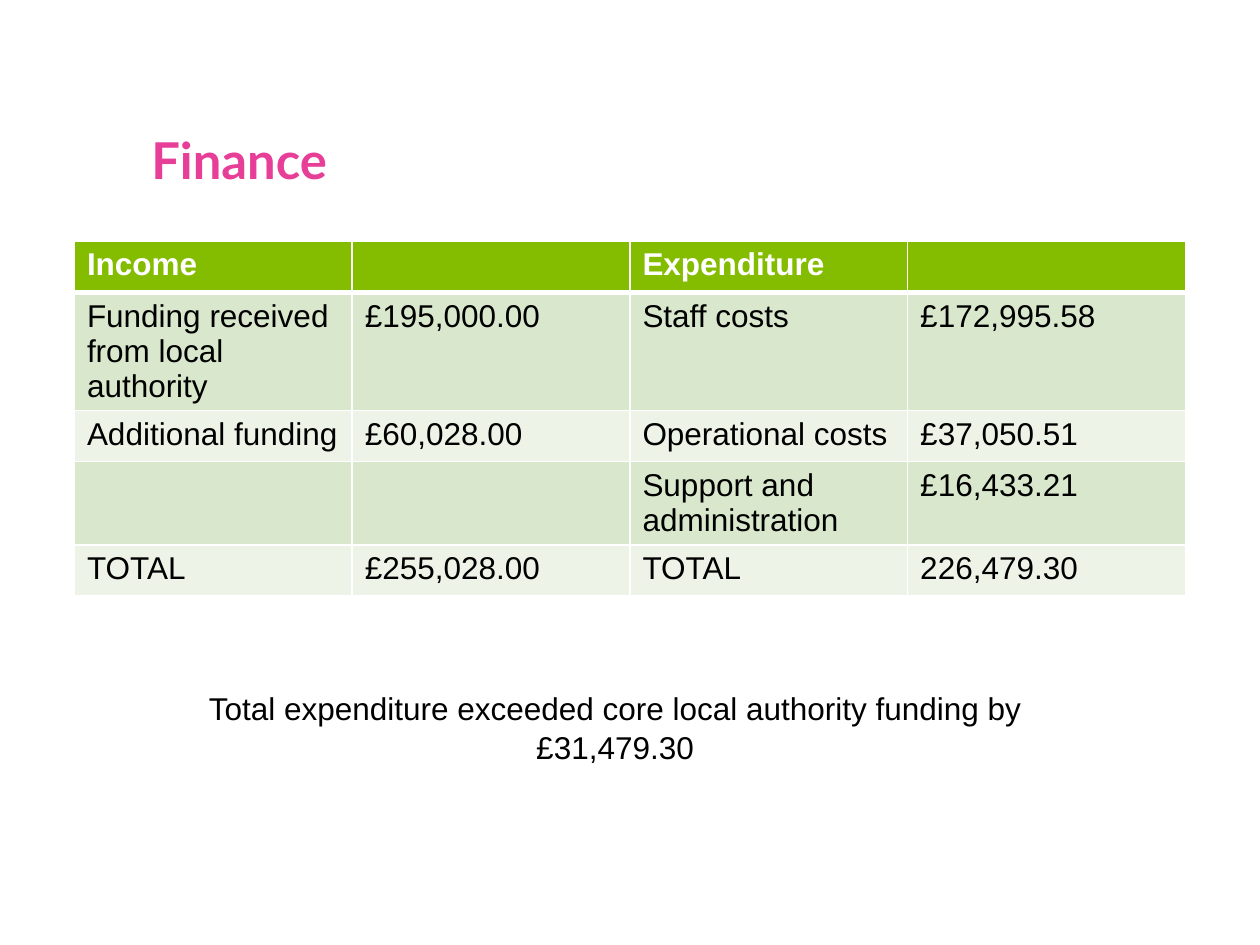
from lxml import etree
from pptx import Presentation
from pptx.dml.color import RGBColor
from pptx.enum import text
from pptx.oxml import ns
from pptx.util import Cm, Pt

PINK = RGBColor(0xE7, 0x3E, 0x97)
GREEN = RGBColor(0x84, 0xBD, 0x00)
BAND_DARK = RGBColor(0xD9, 0xE8, 0xCC)
BAND_LIGHT = RGBColor(0xED, 0xF4, 0xE7)
WHITE = RGBColor(0xFF, 0xFF, 0xFF)
BLACK = RGBColor(0, 0, 0)

ACCOUNTS = [
    ("Income", "", "Expenditure", ""),
    ("Funding received from local authority", "£195,000.00", "Staff costs", "£172,995.58"),
    ("Additional funding", "£60,028.00", "Operational costs", "£37,050.51"),
    ("", "", "Support and administration", "£16,433.21"),
    ("TOTAL", "£255,028.00", "TOTAL", "226,479.30"),
]


def style_text(paragraph, font_name, size, color, bold=False):
    for span in paragraph.runs:
        span.font.name = font_name
        span.font.size = Pt(size)
        span.font.color.rgb = color
        span.font.bold = bold


def set_borders(cell, bottom_width):
    """Give a cell white rules; they must come before its fill."""
    properties = cell._tc.get_or_add_tcPr()
    widths = {"a:lnL": 1, "a:lnR": 1, "a:lnT": 1, "a:lnB": bottom_width}
    for tag, width in widths.items():
        line = etree.SubElement(properties, ns.qn(tag), w=str(Pt(width)))
        fill = etree.SubElement(line, ns.qn("a:solidFill"))
        etree.SubElement(fill, ns.qn("a:srgbClr"), val=str(WHITE))


def place_title(page, left, top, width, height):
    title = page.shapes.title
    title.left, title.top, title.width, title.height = left, top, width, height
    frame = title.text_frame
    frame.text = "Finance"
    frame.margin_left = frame.margin_right = 0
    frame.margin_top = frame.margin_bottom = 0
    frame.vertical_anchor = text.MSO_ANCHOR.MIDDLE
    frame.paragraphs[0].alignment = text.PP_ALIGN.LEFT
    style_text(frame.paragraphs[0], "Lato", 29, PINK, bold=True)


def place_accounts(page, left, top, width, row_height):
    table = page.shapes.add_table(
        len(ACCOUNTS), len(ACCOUNTS[0]), left, top, width, row_height * len(ACCOUNTS)
    ).table
    for row, values in enumerate(ACCOUNTS):
        header = row == 0
        color = GREEN if header else (BAND_LIGHT, BAND_DARK)[row % 2]
        for column, value in enumerate(values):
            cell = table.cell(row, column)
            set_borders(cell, 3 if header else 1)
            cell.fill.solid()
            cell.fill.fore_color.rgb = color
            cell.text_frame.text = value
            paragraph = cell.text_frame.paragraphs[0]
            paragraph.alignment = text.PP_ALIGN.LEFT
            style_text(paragraph, "Arial", 18, WHITE if header else BLACK, header)


def place_note(page, left, top, width, height):
    box = page.shapes.add_textbox(left, top, width, height)
    frame = box.text_frame
    frame.word_wrap = True
    frame.text = "Total expenditure exceeded core local authority funding by £31,479.30"
    paragraph = frame.paragraphs[0]
    paragraph.alignment = text.PP_ALIGN.CENTER
    paragraph.line_spacing = 1.05
    style_text(paragraph, "Arial", 18, BLACK)


def main():
    deck = Presentation()
    deck.slide_width, deck.slide_height = Cm(25.4), Cm(19.05)
    page = deck.slides.add_slide(deck.slide_layouts[5])  # title only

    # Heading, accounts table, closing remark
    place_title(page, Cm(3.05), Cm(2.5), Cm(20.05), Cm(1.4))
    place_accounts(page, Cm(1.5), Cm(4.86), Cm(22.4), Cm(1.03))
    place_note(page, Cm(2.3), Cm(13.72), Cm(20.2), Cm(1.8))

    deck.save("out.pptx")


if __name__ == "__main__":
    main()
